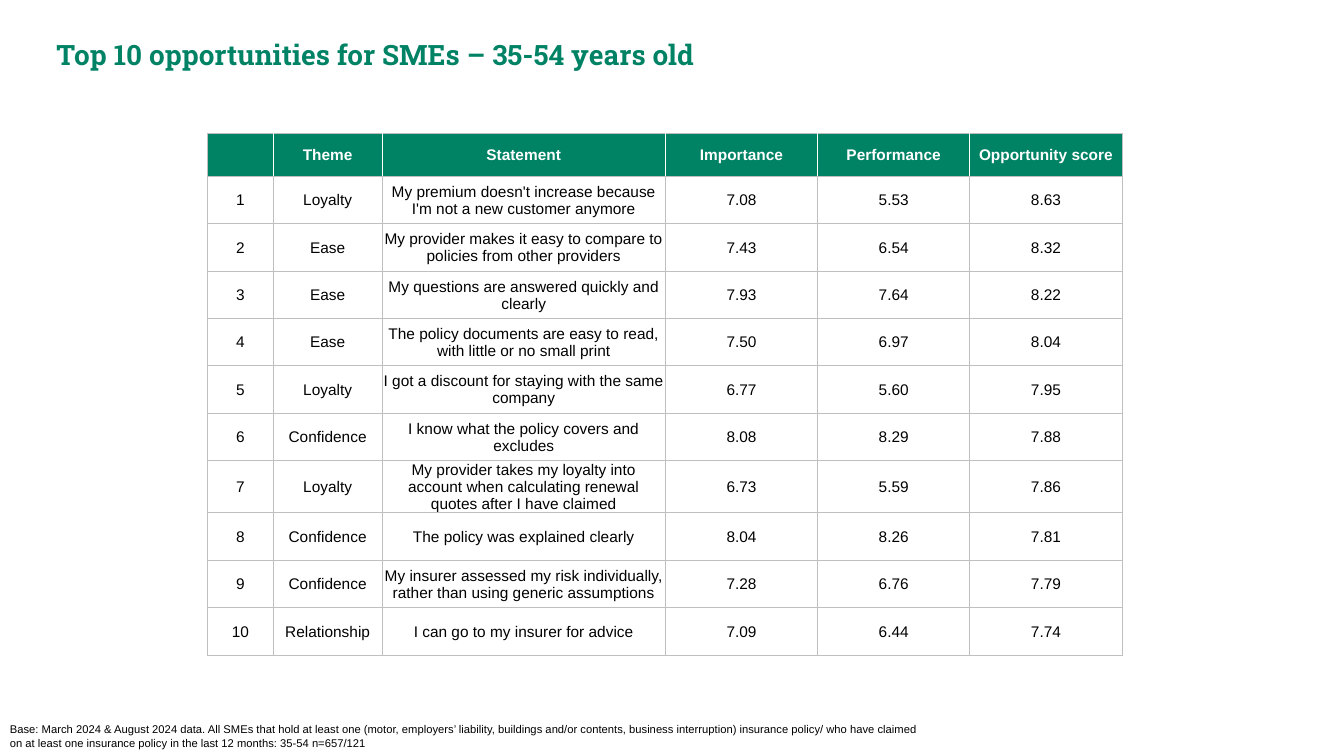
from lxml import etree
from pptx import Presentation
from pptx.dml.color import RGBColor
from pptx.enum.text import MSO_ANCHOR, MSO_AUTO_SIZE, PP_ALIGN
from pptx.oxml.ns import qn
from pptx.util import Inches, Pt

GREEN = RGBColor(0x00, 0x82, 0x65)
GREY = RGBColor(0xBF, 0xBF, 0xBF)
WHITE = RGBColor(0xFF, 0xFF, 0xFF)
BLACK = RGBColor(0x00, 0x00, 0x00)
MIDDLE = MSO_ANCHOR.MIDDLE
LEFT, CENTER = PP_ALIGN.LEFT, PP_ALIGN.CENTER
NO_AUTOFIT = MSO_AUTO_SIZE.NONE

HEADINGS = ("", "Theme", "Statement", "Importance", "Performance", "Opportunity score")
OPPORTUNITIES = [
    ("Loyalty", "My premium doesn't increase because I'm not a new customer anymore", "7.08", "5.53", "8.63"),
    ("Ease", "My provider makes it easy to compare to policies from other providers", "7.43", "6.54", "8.32"),
    ("Ease", "My questions are answered quickly and clearly", "7.93", "7.64", "8.22"),
    ("Ease", "The policy documents are easy to read, with little or no small print", "7.50", "6.97", "8.04"),
    ("Loyalty", "I got a discount for staying with the same company", "6.77", "5.60", "7.95"),
    ("Confidence", "I know what the policy covers and excludes", "8.08", "8.29", "7.88"),
    ("Loyalty", "My provider takes my loyalty into account when calculating renewal quotes after I have claimed",
     "6.73", "5.59", "7.86"),
    ("Confidence", "The policy was explained clearly", "8.04", "8.26", "7.81"),
    ("Confidence", "My insurer assessed my risk individually, rather than using generic assumptions",
     "7.28", "6.76", "7.79"),
    ("Relationship", "I can go to my insurer for advice", "7.09", "6.44", "7.74"),
]
COLUMN_WIDTHS = (0.65, 1.08, 2.81, 1.51, 1.51, 1.51)
HEADER_HEIGHT, ROW_HEIGHT = 0.43, 0.47


def style_font(paragraph, name, size, color, bold=False):
    paragraph.font.name = name
    paragraph.font.size = Pt(size)
    paragraph.font.bold = bold
    paragraph.font.color.rgb = color


def add_border(cell, side, color, width):
    line = etree.SubElement(cell._tc.get_or_add_tcPr(), qn("a:ln" + side), w=str(Pt(width)))
    fill = etree.SubElement(line, qn("a:solidFill"))
    etree.SubElement(fill, qn("a:srgbClr"), val=str(color))


prs = Presentation()
prs.slide_width = Inches(13.33)
prs.slide_height = Inches(7.5)
slide = prs.slides.add_slide(prs.slide_layouts[5])

title = slide.shapes.title
title.left, title.top = Inches(0.46), Inches(0.32)
title.width, title.height = Inches(12.28), Inches(0.44)
title.text_frame.text = "Top 10 opportunities for SMEs – 35-54 years old"
title.text_frame.auto_size = NO_AUTOFIT
title.text_frame.vertical_anchor = MIDDLE
heading = title.text_frame.paragraphs[0]
heading.alignment = LEFT
style_font(heading, "Roboto Slab", 20, GREEN, True)

rows = [HEADINGS] + [(str(rank), *item) for rank, item in enumerate(OPPORTUNITIES, 1)]
ranking = slide.shapes.add_table(
    len(rows), len(HEADINGS), Inches(2.06), Inches(1.32), Inches(sum(COLUMN_WIDTHS)),
    Inches(HEADER_HEIGHT + ROW_HEIGHT * len(OPPORTUNITIES))).table
ranking.horz_banding = False
for column, width in zip(ranking.columns, COLUMN_WIDTHS):
    column.width = Inches(width)

last = len(HEADINGS) - 1
for r, values in enumerate(rows):
    is_header = r == 0
    ranking.rows[r].height = Inches(HEADER_HEIGHT if is_header else ROW_HEIGHT)
    for c, value in enumerate(values):
        cell = ranking.cell(r, c)
        cell.text = value
        cell.vertical_anchor = MIDDLE
        cell.margin_left = cell.margin_right = cell.margin_top = Inches(0.01)
        cell.margin_bottom = 0
        for side, outer in (("L", c == 0), ("R", c == last), ("T", True), ("B", True)):
            if is_header and not outer:
                add_border(cell, side, WHITE, 1)
            else:
                add_border(cell, side, GREY, 0.75)
        if is_header:
            cell.fill.solid()
            cell.fill.fore_color.rgb = GREEN
        else:
            cell.fill.background()
        entry = cell.text_frame.paragraphs[0]
        entry.alignment = CENTER
        style_font(entry, "Arial", 11, WHITE if is_header else BLACK, is_header)

base_note = slide.shapes.add_textbox(Inches(0), Inches(7.12), Inches(9.23), Inches(0.38)).text_frame
base_note.word_wrap = True
base_note.text = (
    "Base: March 2024 & August 2024 data. All SMEs that hold at least one (motor, employers’ liability, "
    "buildings and/or contents, business interruption) insurance policy/ who have claimed on at least one "
    "insurance policy in the last 12 months: 35-54 n=657/121")
style_font(base_note.paragraphs[0], "Arial", 8, BLACK)

prs.save("out.pptx")
